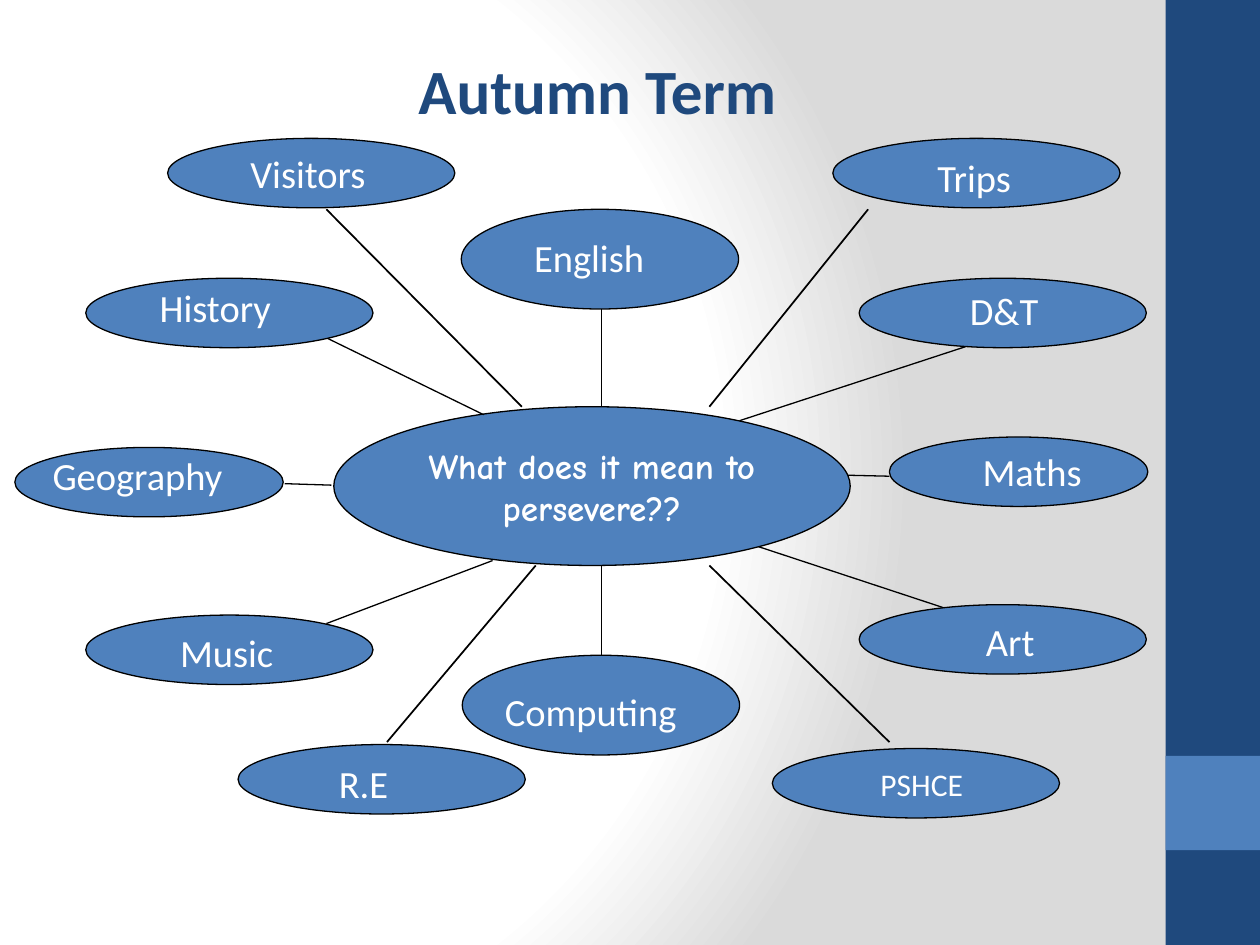
import pptx
import pptx.util
import pptx.dml.color
import pptx.enum.shapes
import pptx.enum.text
import pptx.oxml
import pptx.oxml.ns

Cm = pptx.util.Cm
Pt = pptx.util.Pt
SHAPES = pptx.enum.shapes.MSO_SHAPE
ALIGN = pptx.enum.text.PP_ALIGN
NAVY, BLUE, WHITE, BLACK = "1F497D", "4F81BD", "FFFFFF", "000000"

OVAL, SMALL, WEST, EAST = (5.79, 1.4), (5.59, 2.01), (5.41, 1.4), (5.21, 1.4)
# name, place, size, label offset and width, align, points, spoke ends, weight
TOPICS = [
    ("Visitors", (3.08, 0), OVAL, (1.42, 0.1, 2.84), ALIGN.LEFT, 22, (10.22, 5.41, 6.28, 1.43), 1),
    ("Trips", (16.49, 0), OVAL, (1.68, 0.2, 2.34), ALIGN.CENTER, 22, (14, 5.41, 17.2, 1.43), 1),
    ("English", (9, 1.43), SMALL, (1.22, 0.38, 2.74), ALIGN.LEFT, 22, (11.82, 5.41, 11.82, 3.41), 0.75),
    ("History", (1.43, 2.82), OVAL, (1.24, 0, 3.81), ALIGN.LEFT, 22, (9.45, 5.57, 6.28, 4.02), 0.75),
    ("D&T", (17.02, 2.82), OVAL, (1.98, 0.05, 3.81), ALIGN.LEFT, 22, (14.61, 5.69, 19.16, 4.2), 0.75),
    ("Geography", (0, 6.23), WEST, (0.51, -0.03, 3.96), ALIGN.LEFT, 22, (6.38, 6.99, 5.44, 6.96), 0.75),
    ("Maths", (17.63, 6.02), EAST, (1.63, 0.1, 2.51), ALIGN.LEFT, 22, (16.79, 6.79, 17.63, 6.81), 0.75),
    ("Music", (1.43, 9.61), OVAL, (1.65, 0.15, 3.81), ALIGN.LEFT, 22, (9.63, 8.51, 6.28, 9.78), 0.75),
    ("Art", (17.02, 9.4), OVAL, (1.14, 0.15, 3.81), ALIGN.CENTER, 22, (14.99, 8.23, 18.78, 9.48), 0.75),
    ("Computing", (9.02, 10.42), SMALL, (0.61, 0.53, 4.01), ALIGN.LEFT, 22, (11.82, 8.61, 11.82, 10.42), 0.75),
    ("R.E", (4.5, 12.22), OVAL, (1.78, 0.18, 1.52), ALIGN.LEFT, 22, (10.5, 8.61, 7.5, 12.17), 1),
    ("PSHCE", (15.27, 12.3), OVAL, (1.93, 0.2, 2.18), ALIGN.LEFT, 18, (14, 8.61, 17.63, 12.17), 1),
]


def color(value):
    return pptx.dml.color.RGBColor.from_string(value)


def add_shape(page, kind, box, fill, line=None):
    shape = page.shapes.add_shape(kind, *map(Cm, box))
    shape.shadow.inherit = False
    shape.fill.solid()
    shape.fill.fore_color.rgb = color(fill)
    if line:
        shape.line.color.rgb = color(line)
        shape.line.width = Pt(0.75)
    else:
        shape.line.fill.background()
    return shape


def write(frame, text, size, font, ink, align, bold=False):
    frame.text = text
    for para in frame.paragraphs:
        para.alignment = align
        for span in para.runs:
            span.font.size = Pt(size)
            span.font.name = font
            span.font.bold = bold
            span.font.color.rgb = color(ink)


def add_label(page, box, text, size, ink, align, bold=False):
    label = page.shapes.add_textbox(*map(Cm, box))
    label.text_frame.word_wrap = True
    if align == ALIGN.LEFT:
        label.text_frame.margin_right = 0
    write(label.text_frame, text, size, "Calibri", ink, align, bold)


def add_spoke(page, ends, weight):
    spoke = page.shapes.add_connector(pptx.enum.shapes.MSO_CONNECTOR.STRAIGHT, *map(Cm, ends))
    spoke.line.color.rgb = color(BLACK)
    spoke.line.width = Pt(weight)
    properties = spoke._element.spPr
    properties.append(properties.makeelement(pptx.oxml.ns.qn("a:effectLst"), {}))


def paint_background(page):
    stops = "".join(
        f'<a:gs pos="{position}"><a:srgbClr val="{value}"/></a:gs>'
        for position, value in [(0, WHITE), (75000, WHITE), (100000, "DADADA")]
    )
    background = pptx.oxml.parse_xml(
        f'<p:bg {pptx.oxml.ns.nsdecls("p", "a")}><p:bgPr><a:gradFill rotWithShape="1">'
        f'<a:gsLst>{stops}</a:gsLst><a:path path="circle">'
        '<a:fillToRect l="20000" t="50000" r="100000" b="50000"/></a:path>'
        "</a:gradFill><a:effectLst/></p:bgPr></p:bg>"
    )
    page._element.cSld.insert(0, background)


def draw_side_band(page, left, top, width, height):
    add_shape(page, SHAPES.RECTANGLE, (left, top, width, height), NAVY)
    add_shape(page, SHAPES.RECTANGLE, (left, top + height * 0.8, width, width), BLUE)


def draw_hub(page, box):
    hub = add_shape(page, SHAPES.OVAL, box, BLUE, BLACK)
    hub.text_frame.word_wrap = False
    hub.text_frame.vertical_anchor = pptx.enum.text.MSO_ANCHOR.MIDDLE
    write(hub.text_frame, "What does it mean to\npersevere??", 20, "Comic Neue", WHITE, ALIGN.CENTER, True)


def draw_topic_map(page, left, top):
    draw_hub(page, (left + 6.43, top + 5.41, 10.41, 3.2))
    for name, (x, y), size, (dx, dy, width), align, points, ends, weight in TOPICS:
        x1, y1, x2, y2 = ends
        add_spoke(page, (left + x1, top + y1, left + x2, top + y2), weight)
        add_shape(page, SHAPES.OVAL, (left + x, top + y, *size), BLUE, BLACK)
        add_label(page, (left + x + dx, top + y + dy, width, 1.19), name, points, WHITE, align)


def main():
    deck = pptx.Presentation()
    deck.slide_width, deck.slide_height = Cm(25.4), Cm(19.05)
    page = deck.slides.add_slide(deck.slide_layouts[6])
    paint_background(page)
    draw_side_band(page, 23.5, 0, 1.9, 19.05)
    add_label(page, (1.95, 0.91, 20.19, 1.8), "Autumn Term", 36, NAVY, ALIGN.CENTER, True)
    draw_topic_map(page, 0.3, 2.79)
    deck.save("out.pptx")


if __name__ == "__main__":
    main()
